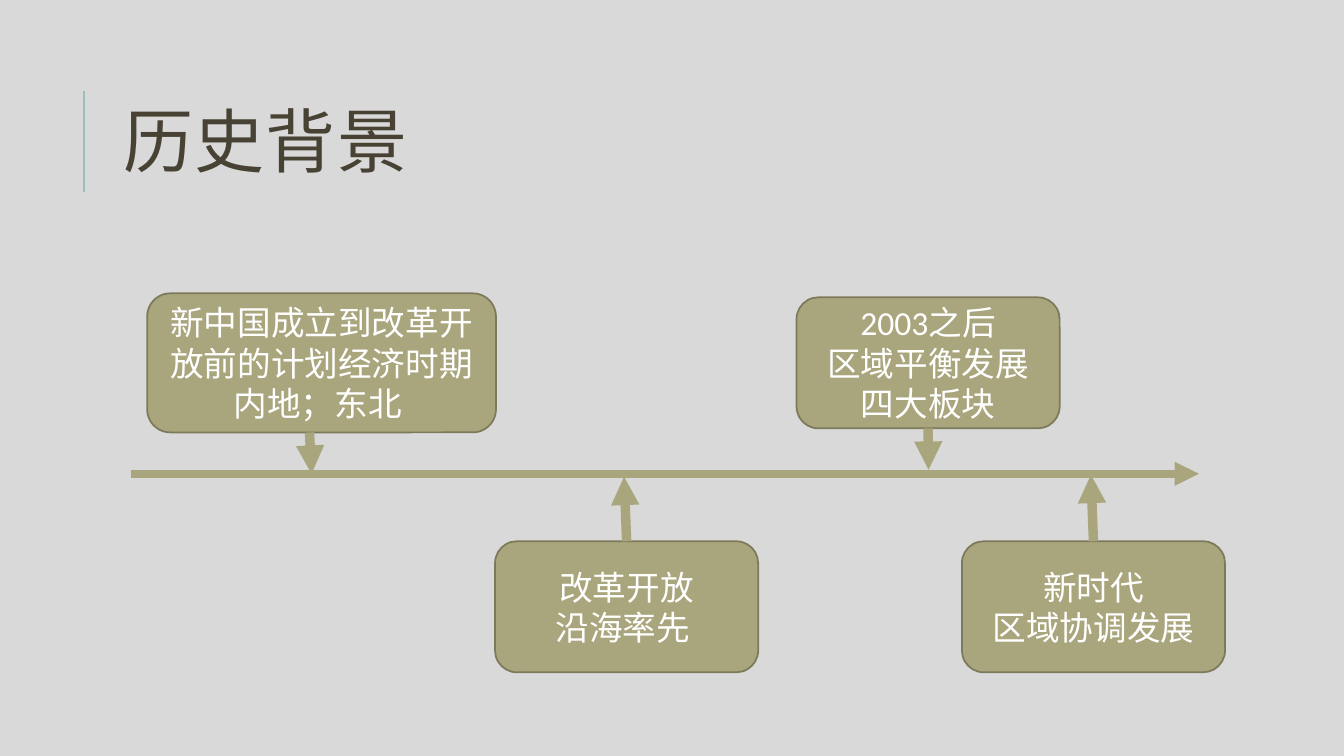
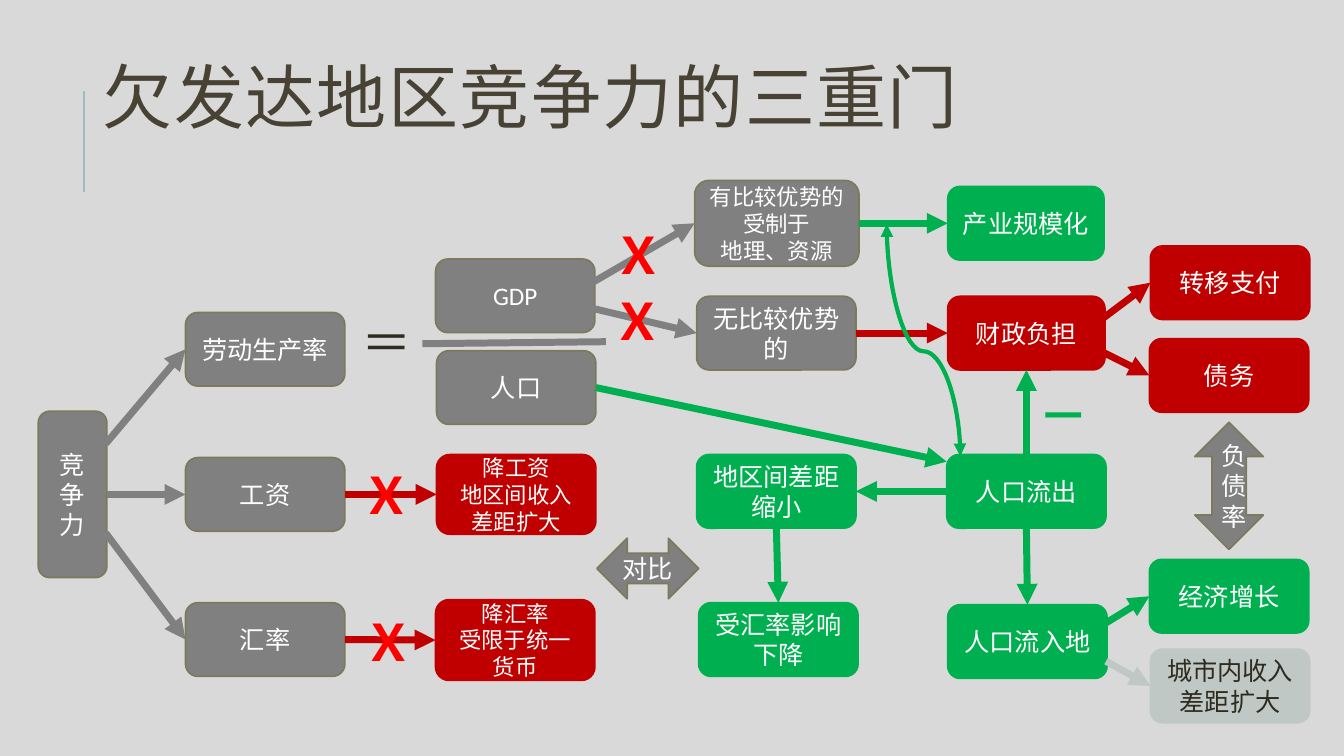
from lxml import etree
from pptx import Presentation
from pptx import util as u
from pptx.dml import color as dml
from pptx.enum import lang, shapes, text
from pptx.oxml import ns

PX = 9144  # EMU in one px, 100 px to the inch
FONT = "Calibri"
PAPER, INK, TITLE, ACCENT = "D9D9D9", "2E2B21", "474233", "9CBEBD"
OLIVE, OLIVE_EDGE, WHITE = "A9A57C", "7D7A5C", "FFFFFF"
GREY, GREEN, CRIMSON, MIST, RED = "808080", "00B050", "C00000", "BFC8C4", "FF0000"
TOP, LEFT, BOTTOM, RIGHT = range(4)
ROUND = shapes.MSO_SHAPE.ROUNDED_RECTANGLE


def px(*values):
    return [u.Emu(v * PX) for v in values]


def rgb(value):
    return dml.RGBColor.from_string(value)


def write(tf, content, size=18, color=WHITE, bold=False, align=None,
          anchor=None, line_spacing=None, tracking=None):
    """Fill a text frame, one paragraph for each line of content."""
    tf.word_wrap = True
    tf.auto_size = text.MSO_AUTO_SIZE.NONE
    if anchor is not None:
        tf.vertical_anchor = anchor
    for i, line in enumerate(content.split("\n")):
        p = tf.add_paragraph() if i else tf.paragraphs[0]
        p.alignment, p.line_spacing = align, line_spacing
        r = p.add_run()
        r.text = line
        font = r.font
        font.name, font.size, font.bold = FONT, u.Pt(size), bold
        font.color.rgb = rgb(color)
        font.language_id = lang.MSO_LANGUAGE_ID.SIMPLIFIED_CHINESE
        if tracking:
            r._r.get_or_add_rPr().set("spc", str(tracking))


def add_slide(prs, title, *rect):
    slide = prs.slides.add_slide(prs.slide_layouts[5])
    sp = slide.shapes.title
    sp.left, sp.top, sp.width, sp.height = px(*rect)
    write(sp.text_frame, title, size=50, color=TITLE, align=text.PP_ALIGN.LEFT,
          anchor=text.MSO_ANCHOR.MIDDLE, line_spacing=0.8, tracking=100)
    return slide


def box(slide, rect, label, fill, size=18, color=WHITE, kind=ROUND):
    edge = OLIVE_EDGE if fill in (OLIVE, GREY) else fill
    sp = slide.shapes.add_shape(kind, *px(*rect))
    sp.shadow.inherit = False
    sp.fill.solid()
    sp.fill.fore_color.rgb = rgb(fill)
    sp.line.color.rgb = rgb(edge)
    sp.line.width = u.Pt(1.25)
    write(sp.text_frame, label, size=size, color=color,
          align=text.PP_ALIGN.CENTER, anchor=text.MSO_ANCHOR.MIDDLE)
    return sp


def mark(slide, x, y, sign, color, bold=True, width=70):
    sp = slide.shapes.add_textbox(*px(x, y, width, 71))
    write(sp.text_frame, sign, size=36, color=color, bold=bold)


def link(slide, start, end, color, width=5, heads=("tailEnd",),
         kind=shapes.MSO_CONNECTOR.STRAIGHT):
    """Draw a connector; an end is a point or a (shape, side) pair."""
    joined = [not isinstance(e[0], int) for e in (start, end)]
    points = [(0, 0) if j else e for j, e in zip(joined, (start, end))]
    cx = slide.shapes.add_connector(kind, *px(*points[0], *points[1]))
    if joined[0]:
        cx.begin_connect(*start)
    if joined[1]:
        cx.end_connect(*end)
    cx.line.color.rgb = rgb(color)
    cx.line.width = u.Pt(width)
    ln = cx.line._get_or_add_ln()
    for head in heads:
        etree.SubElement(ln, ns.qn("a:" + head), type="triangle")
    etree.SubElement(cx.element.spPr, ns.qn("a:effectLst"))
    return cx


def set_master(prs, slide):
    """Give every slide its background and the accent line beside the title."""
    master = prs.slide_master
    master.background.fill.solid()
    master.background.fill.fore_color.rgb = rgb(PAPER)
    accent = link(slide, (83, 190), (83, 90), ACCENT, width=1.5, heads=())
    accent.element.xpath(".//p:cNvPr")[0].set("id", "99")
    master.shapes.element.append(accent.element)


def add_history(prs):
    slide = add_slide(prs, "历史背景", 112, 64, 1063, 164)
    link(slide, (130, 470), (1189, 470), OLIVE, width=5.75)
    periods = [
        ((146, 291, 346, 138), "新中国成立到改革开放前的计划经济时期\n内地；东北 ", None, (309, 470)),
        ((491, 537, 261, 130), "改革开放\n沿海率先 ", TOP, (619, 473)),
        ((790, 295, 261, 130), "2003之后\n区域平衡发展\n四大板块", BOTTOM, (921, 466)),
        ((954, 537, 261, 130), "新时代\n区域协调发展", TOP, (1082, 471)),
    ]
    for rect, label, side, tip in periods:
        sp = box(slide, rect, label, OLIVE, size=24)
        start = (307, 429) if side is None else (sp, side)
        link(slide, start, tip, OLIVE, width=6.75)
    return slide


def add_competitiveness(prs):
    slide = add_slide(prs, "欠发达地区竞争力的三重门", 92, 30, 1150, 145)
    factor, cause, region, flow, result = 184, 433, 691, 940, 1141
    w, h = 158, 73

    def node(x, y, label, fill, width=w, height=h, **fmt):
        return box(slide, (x, y, width, height), label, fill, **fmt)

    power = node(38, 408, "竞争力", GREY, 68, 165)
    output, wage, rate = [node(factor, 310 + 144 * i, label, GREY)
                          for i, label in enumerate(("劳动生产率", "工资", "汇率"))]
    low_rate = node(432, 595, "降汇率\n受限于统一货币", CRIMSON, height=80, size=16)
    low_wage = node(cause, 451, "降工资\n地区间收入差距扩大", CRIMSON, height=79, size=16)
    people = node(cause, 348, "人口", GREY)
    node(432, 257, "GDP", GREY)
    strong = node(689, 179, "有比较优势的受制于\n地理、资源", GREY, 163, 85, size=16)
    weak = node(region, 294, "无比较优势的", GREY)
    gap = node(region, 451, "地区间差距缩小", GREEN)
    affected = node(693, 598, "受汇率影响下降", GREEN)
    scale = node(flow, 185, "产业规模化", GREEN, 155)
    burden = node(flow, 294, "财政负担", CRIMSON, 156)
    outflow = node(939, 451, "人口流出", GREEN)
    inflow = node(flow, 600, "人口流入地", GREEN)
    transfer = node(result, 244, "转移支付", CRIMSON)
    debt = node(1140, 336, "债务", CRIMSON)
    growth = node(1140, 555, "经济增长", GREEN)
    city_gap = node(result, 644, "城市内收入差距扩大", MIST, color=INK)
    node(592, 534, "对比", GREY, 101, 60, kind=shapes.MSO_SHAPE.LEFT_RIGHT_ARROW)
    node(1185, 419, "负债率", GREY, 68, 126, kind=shapes.MSO_SHAPE.UP_DOWN_ARROW)

    links = [
        ((105, 440), (output, LEFT), GREY),
        ((power, RIGHT), (wage, LEFT), GREY),
        ((105, 529), (rate, LEFT), GREY),
        ((588, 280), (strong, LEFT), GREY),
        ((588, 306), (weak, LEFT), GREY),
        ((wage, RIGHT), (low_wage, LEFT), CRIMSON),
        ((rate, RIGHT), (low_rate, LEFT), CRIMSON),
        ((weak, RIGHT), (burden, LEFT), CRIMSON),
        ((1095, 315), (transfer, LEFT), CRIMSON),
        ((1095, 350), (debt, LEFT), CRIMSON),
        ((strong, RIGHT), (scale, LEFT), GREEN),
        ((people, RIGHT), (939, 458), GREEN),
        ((outflow, LEFT), (gap, RIGHT), GREEN),
        ((outflow, TOP), (burden, BOTTOM), GREEN),
        ((outflow, BOTTOM), (inflow, TOP), GREEN),
        ((gap, BOTTOM), (affected, TOP), GREEN),
        ((1097, 618), (growth, LEFT), GREEN),
        ((1097, 656), (city_gap, LEFT), MIST),
    ]
    for start, end, color in links:
        link(slide, start, end, color)
    link(slide, (419, 341), (601, 339), GREY, heads=())  # fraction bar

    curve = link(slide, (1031, 301), (801, 374), GREEN, width=3,
                 heads=("headEnd", "tailEnd"), kind=shapes.MSO_CONNECTOR.CURVE)
    curve.rotation = 270
    guides = curve.element.xpath(".//a:avLst")[0]
    etree.SubElement(guides, ns.qn("a:gd"), name="adj1", fmla="val 54800")

    mark(slide, 349, 304, "＝", INK, bold=False, width=80)
    for x, y in ((349, 456), (351, 601), (599, 217), (598, 283)):
        mark(slide, x, y, "Ｘ", RED)
    mark(slide, 1020, 376, "－", GREEN)


def main():
    prs = Presentation()
    prs.slide_width, prs.slide_height = px(1333, 750)
    set_master(prs, add_history(prs))
    add_competitiveness(prs)
    prs.save("out.pptx")


if __name__ == "__main__":
    main()
